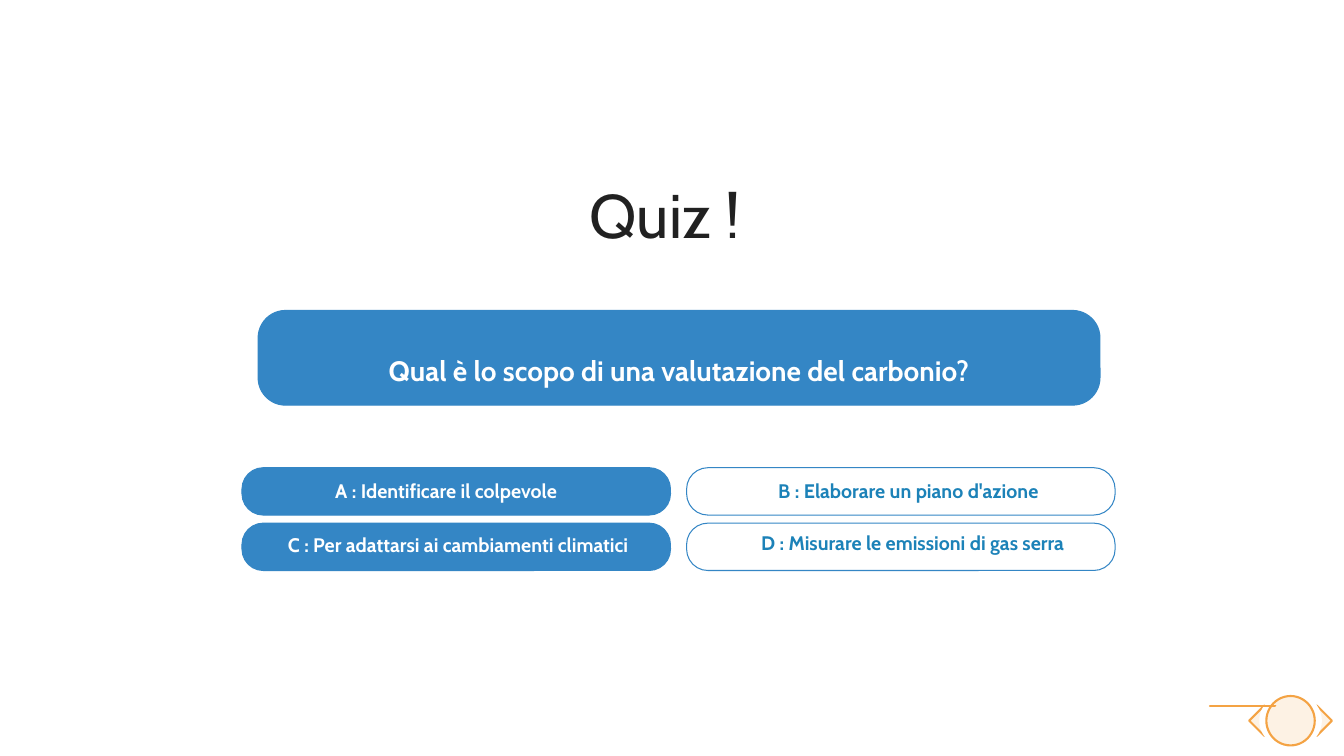
from pptx import Presentation
from pptx import util as u
from pptx.dml.color import RGBColor
from pptx.enum import shapes, text
from pptx.oxml.ns import qn
from lxml import etree

BLUE = RGBColor(0x34, 0x86, 0xC5)
LABEL_BLUE = RGBColor(0x1C, 0x82, 0xB8)
WHITE = RGBColor(0xFF, 0xFF, 0xFF)
ORANGE = RGBColor(0xF4, 0xA3, 0x44)
DARK = RGBColor(0x21, 0x21, 0x21)
CENTER, LEFT = text.PP_ALIGN.CENTER, text.PP_ALIGN.LEFT
TOP, MIDDLE, BOTTOM = (text.MSO_ANCHOR.TOP, text.MSO_ANCHOR.MIDDLE,
                       text.MSO_ANCHOR.BOTTOM)
KIND = shapes.MSO_SHAPE


class QuizSlide:
    """Holds the font and the slide that is being drawn."""

    def __init__(self, deck, font):
        self.page = deck.slides.add_slide(deck.slide_layouts[6])
        self.font = font

    def shape(self, kind, left, top, width, height, fill, line, weight,
              opacity=None, radius=None):
        box = self.page.shapes.add_shape(
            kind, *map(u.Inches, (left, top, width, height)))
        box.shadow.inherit = False
        box.fill.solid()
        box.fill.fore_color.rgb = fill
        box.line.color.rgb = line
        box.line.width = u.Pt(weight)
        if radius is not None:
            box.adjustments[0] = radius
        if opacity is not None:
            color = box._element.spPr.find(qn("a:solidFill"))[0]
            etree.SubElement(color, qn("a:alpha"), val=str(opacity * 1000))
        return box

    def curve(self, points, color, weight):
        builder = self.page.shapes.build_freeform(
            *points[0], scale=u.Inches(1))
        builder.add_line_segments(points[1:], close=False)
        arc = builder.convert_to_shape()
        arc.shadow.inherit = False
        arc.fill.background()
        arc.line.color.rgb = color
        arc.line.width = u.Pt(weight)

    def add_words(self, box, words, size, color, bold=True, align=CENTER,
                  anchor=TOP, bottom=0.05):
        frame = box.text_frame
        frame.word_wrap = True
        frame.vertical_anchor = anchor
        frame.margin_bottom = u.Inches(bottom)
        para = frame.paragraphs[0]
        para.alignment = align
        span = para.add_run()
        span.text = words
        span.font.name = self.font
        span.font.size = u.Pt(size)
        span.font.bold = bold
        span.font.color.rgb = color

    def label(self, left, top, width, height, words, size, color, **style):
        box = self.page.shapes.add_textbox(
            *map(u.Inches, (left, top, width, height)))
        self.add_words(box, words, size, color, **style)


def main():
    deck = Presentation()
    deck.slide_width, deck.slide_height = u.Inches(13.33), u.Inches(7.5)
    quiz = QuizSlide(deck, "Cabin")

    # Page number badge: an arrow on each side, masked by a white disc
    mid_x, mid_y = 12.8, 7.15
    disc_w, disc_h = 0.48, 0.49
    disc_top = mid_y - disc_h / 2
    for side in (-1, 1):
        arrow = quiz.shape(KIND.STRIPED_RIGHT_ARROW,
                           mid_x + side * 0.25 - 0.16, mid_y - 0.15,
                           0.32, 0.3, ORANGE, ORANGE, 1.5, opacity=14)
        arrow.rotation = 0 if side > 0 else 180
        quiz.shape(KIND.OVAL, mid_x + side * 0.06 - disc_w / 2, disc_top,
                   disc_w, disc_h, WHITE, WHITE, 1.5)
        steps = [step / 6 for step in range(-6, 7)]
        quiz.curve([(mid_x + side * (0.28 + 0.05 * (1 - t * t)),
                     mid_y + 0.14 * t) for t in steps], ORANGE, 1.5)
    quiz.shape(KIND.OVAL, mid_x - disc_w / 2, disc_top, disc_w, disc_h,
               ORANGE, ORANGE, 1.5, opacity=14)

    # Answer buttons: filled on the left, outlined on the right
    for column, fill in enumerate((BLUE, WHITE)):
        for row in range(2):
            quiz.shape(KIND.ROUNDED_RECTANGLE, 2.4 + column * 4.41,
                       4.64 + row * 0.55, 4.25, 0.47, fill, BLUE, 0.75,
                       radius=0.45)

    # Question
    question = quiz.shape(KIND.ROUNDED_RECTANGLE, 2.56, 3.08, 8.35, 0.94,
                          BLUE, BLUE, 0.75, radius=0.29)
    quiz.add_words(question,
                   "Qual è lo scopo di una valutazione del carbonio?",
                   20, WHITE, anchor=BOTTOM, bottom=0.1)

    # Answers
    answers = [
        (2.55, 4.7, 3.75, "A : Identificare il colpevole", WHITE, CENTER),
        (7.62, 4.7, 4.13, "B : Elaborare un piano d'azione",
         LABEL_BLUE, LEFT),
        (2.42, 5.24, 4.25, "C : Per adattarsi ai cambiamenti climatici",
         WHITE, CENTER),
        (7.45, 5.22, 3.51, "D : Misurare le emissioni di gas serra",
         LABEL_BLUE, LEFT),
    ]
    for left, top, width, words, color, align in answers:
        quiz.label(left, top, width, 0.45, words, 14, color, align=align)

    # Title
    quiz.label(1.66, 1.59, 10.01, 1.07, "Quiz ! ", 44, DARK, bold=False,
               anchor=MIDDLE)

    deck.save("out.pptx")


if __name__ == "__main__":
    main()
